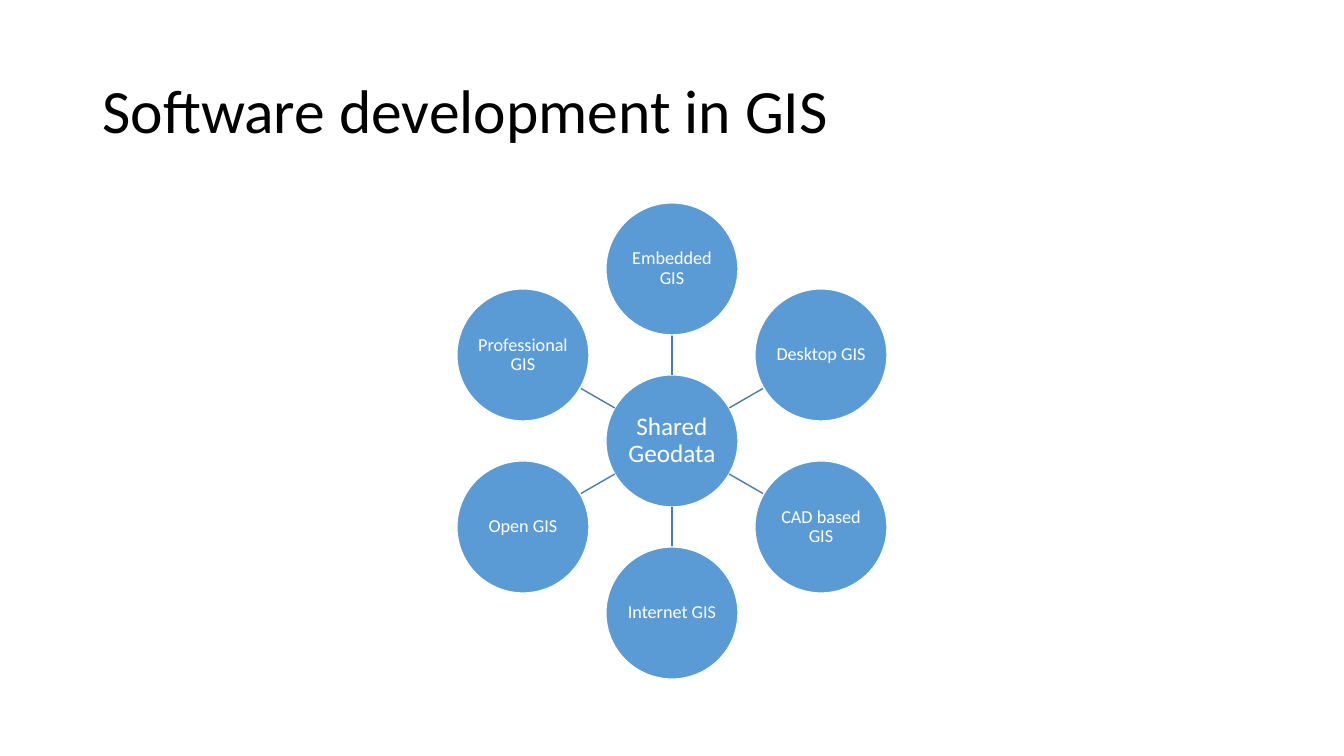
from math import cos, radians, sin

from lxml import etree
from pptx import Presentation
from pptx.dml.color import RGBColor
from pptx.enum.shapes import MSO_CONNECTOR, MSO_SHAPE
from pptx.enum.text import MSO_ANCHOR as ANCHOR, MSO_AUTO_SIZE, PP_ALIGN as ALIGN
from pptx.oxml.ns import qn
from pptx.util import Pt

COLORS = {"text": "000000", "circle": "5B9BD5", "white": "FFFFFF", "spoke": "497CAB"}
FONT = "Calibri"
HUB = "Shared Geodata"
# Clockwise from the top
SATELLITES = ["Embedded GIS", "Desktop GIS", "CAD based GIS",
              "Internet GIS", "Open GIS", "Professional GIS"]


def color(name):
    return RGBColor.from_string(COLORS[name])


def write(tf, text, size, color_name, align):
    tf.word_wrap = True
    tf.auto_size = MSO_AUTO_SIZE.NONE
    tf.vertical_anchor = ANCHOR.MIDDLE
    p = tf.paragraphs[0]
    p.alignment = align
    p.line_spacing = 0.9
    r = p.add_run()
    r.text = text
    r.font.name = FONT
    r.font.size = Pt(size)
    r.font.color.rgb = color(color_name)


def add_title(slide, text, left, top, width, height):
    sp = slide.shapes.title
    sp.left, sp.top, sp.width, sp.height = Pt(left), Pt(top), Pt(width), Pt(height)
    write(sp.text_frame, text, 44, "text", ALIGN.LEFT)


def add_circle(shapes, text, size, cx, cy, diameter):
    sp = shapes.add_shape(MSO_SHAPE.OVAL, Pt(cx - diameter / 2), Pt(cy - diameter / 2),
                          Pt(diameter), Pt(diameter))
    sp.shadow.inherit = False
    sp.fill.solid()
    sp.fill.fore_color.rgb = color("circle")
    sp.line.color.rgb = color("white")
    sp.line.width = Pt(1)
    tf = sp.text_frame
    tf.margin_left = tf.margin_right = tf.margin_top = tf.margin_bottom = Pt(0.7)
    write(tf, text, size, "white", ALIGN.CENTER)


def add_spoke(shapes, x1, y1, x2, y2):
    line = shapes.add_connector(MSO_CONNECTOR.STRAIGHT, Pt(x1), Pt(y1), Pt(x2), Pt(y2))
    line.line.color.rgb = color("spoke")
    line.line.width = Pt(1)
    etree.SubElement(line._element.spPr, qn("a:effectLst"))


def add_radial_diagram(slide, left, top, width, height, diameter=94.4):
    shapes = slide.shapes.add_group_shape().shapes
    cx, cy = left + width / 2, top + height / 2
    orbit = (height - diameter) / 2

    # Hub
    add_circle(shapes, HUB, 18, cx, cy, diameter)

    # Spokes and satellites
    for i, name in enumerate(SATELLITES):
        angle = radians(360 / len(SATELLITES) * i - 90)
        dx, dy = cos(angle), sin(angle)
        inner, outer = diameter / 2, orbit - diameter / 2
        add_spoke(shapes, cx + inner * dx, cy + inner * dy,
                  cx + outer * dx, cy + outer * dy)
        add_circle(shapes, name, 13, cx + orbit * dx, cy + orbit * dy, diameter)


def main():
    prs = Presentation()
    prs.slide_width, prs.slide_height = Pt(960), Pt(540)
    slide = prs.slides.add_slide(prs.slide_layouts[5])
    add_title(slide, "Software development in GIS", 66, 28.8, 828, 104.4)
    add_radial_diagram(slide, 66, 144.9, 828, 340.2)
    prs.save("out.pptx")


if __name__ == "__main__":
    main()
